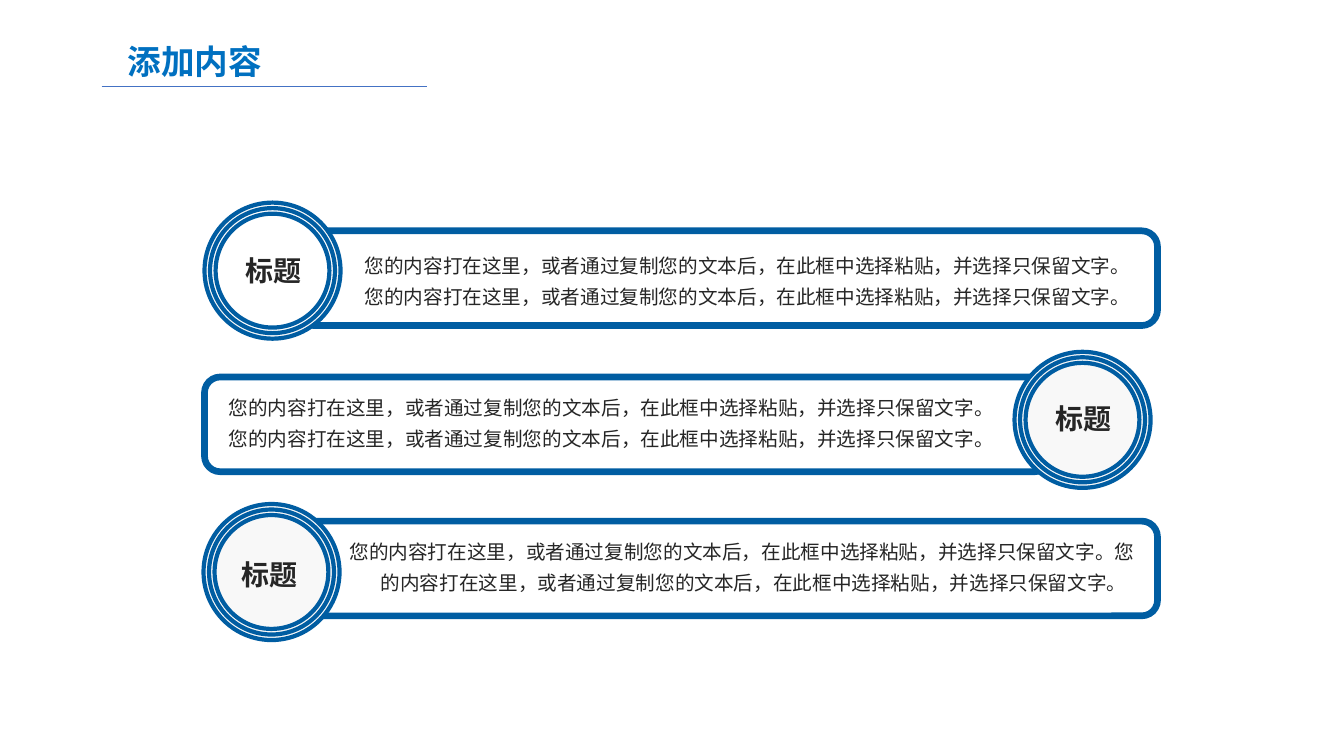
import pptx
import pptx.util
import pptx.dml.color
import pptx.enum.shapes
import pptx.enum.text
import lxml.etree
import pptx.oxml.ns

RGB = pptx.dml.color.RGBColor
SHAPE = pptx.enum.shapes.MSO_SHAPE
ALIGN = pptx.enum.text.PP_ALIGN
Pt = pptx.util.Pt

BLUE = RGB(0x00, 0x5D, 0xA2)
SKY = RGB(0x00, 0x70, 0xC0)
RULE = RGB(0x44, 0x72, 0xC4)
DARK = RGB(0x26, 0x26, 0x26)
PALE = RGB(0xF8, 0xF8, 0xF8)
WHITE = RGB(0xFF, 0xFF, 0xFF)
FONT = "Noto Sans CJK SC"

HEAD = "添加内容"
LABEL = "标题"
BODY = "您的内容打在这里，或者通过复制您的文本后，在此框中选择粘贴，并选择只保留文字。" * 2
ROWS = [
    dict(bar=(29.6, 22.9, 85.3), ring=(20.3, 20.1), core=WHITE,
         label=(20.5, 24.7, 13.3, 4.4), side=ALIGN.CENTER,
         body=(35.2, 24, 78.2, 6.8), hang=0),
    dict(bar=(20.3, 37.4, 84), ring=(100.7, 34.9), core=PALE,
         label=(103.8, 39.3, 10.9, 4.4), side=ALIGN.LEFT,
         body=(21.7, 38.1, 78.4, 9.8), hang=0),
    dict(bar=(29.6, 51.7, 85.3), ring=(20.2, 50), core=PALE,
         label=(23, 54.8, 12.5, 4.4), side=ALIGN.LEFT,
         body=(33.7, 52.4, 81.1, 6.8), hang=3.1),
]
BAR_H, RING, STEP = 9.4, 13.5, 0.55
COLS, LINES = 133.4, 75

deck = pptx.Presentation()
deck.slide_width = pptx.util.Inches(13.34)
deck.slide_height = pptx.util.Inches(7.5)
slide = deck.slides.add_slide(deck.slide_layouts[5])
shapes = slide.shapes


def col(n):
    return round(deck.slide_width * n / COLS)


def row(n):
    return round(deck.slide_height * n / LINES)


def place(x, y, w, h):
    return col(x), row(y), col(w), row(h)


def apply(item, form):
    for name, value in form.items():
        setattr(item, name, value)


def draw(home, kind, spot, fill, width):
    shape = home.add_shape(kind, *place(*spot))
    shape.shadow.inherit = False
    if fill is None:
        shape.fill.background()
    else:
        shape.fill.solid()
        shape.fill.fore_color.rgb = fill
    shape.line.color.rgb = BLUE
    shape.line.width = Pt(width)


def write(box, text, size, color, bold=False, align=ALIGN.LEFT, space=None, hang=0, wrap=True):
    apply(box.text_frame, dict(word_wrap=wrap,
                               vertical_anchor=pptx.enum.text.MSO_ANCHOR.TOP,
                               auto_size=pptx.enum.text.MSO_AUTO_SIZE.SHAPE_TO_FIT_TEXT))
    para = box.text_frame.paragraphs[0]
    apply(para, dict(alignment=align, line_spacing=space))
    if hang:
        props = para._p.get_or_add_pPr()
        props.set("marL", str(col(hang)))
        props.set("indent", str(-col(hang)))
    run = para.add_run()
    run.text = text
    apply(run.font, dict(size=Pt(size), bold=bold, name=FONT))
    run.font.color.rgb = color
    east = lxml.etree.SubElement(run._r.get_or_add_rPr(), pptx.oxml.ns.qn("a:ea"))
    east.set("typeface", FONT)


def add_text(spot, *args, **form):
    write(shapes.add_textbox(*place(*spot)), *args, **form)


title = shapes.title
apply(title, dict(zip(("left", "top", "width", "height"), place(11.6, 3.6, 15.5, 5))))
write(title, HEAD, 24, SKY, bold=True, align=ALIGN.CENTER, wrap=False)

rule = shapes.add_connector(pptx.enum.shapes.MSO_CONNECTOR.STRAIGHT,
                            col(10.1), row(8.6), col(42.4), row(8.6))
rule.line.color.rgb = RULE
rule.line.width = Pt(0.5)
lxml.etree.SubElement(rule._element.spPr, pptx.oxml.ns.qn("a:effectLst"))

for item in ROWS:
    x, y, w = item["bar"]
    draw(shapes, SHAPE.ROUNDED_RECTANGLE, (x, y, w, BAR_H), None, 4.75)

for item in ROWS:
    group = shapes.add_group_shape().shapes
    x, y = item["ring"]
    for n, fill in enumerate((PALE, item["core"], None)):
        gap = n * STEP
        side = RING - 2 * gap
        draw(group, SHAPE.OVAL, (x + gap, y + gap, side, side), fill, 3)
    add_text(item["label"], LABEL, 20, DARK, bold=True, align=item["side"])
    add_text(item["body"], BODY, 14, DARK, space=1.3, hang=item["hang"])

deck.save("out.pptx")
